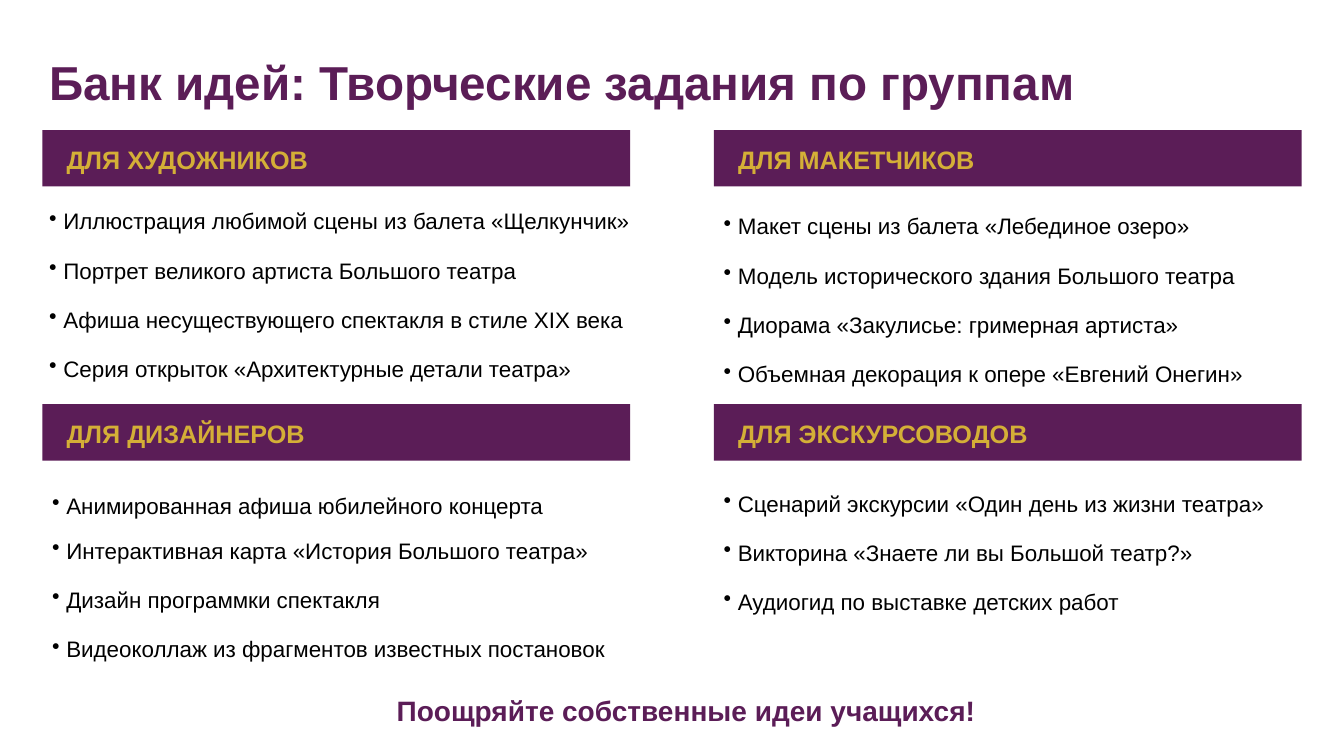
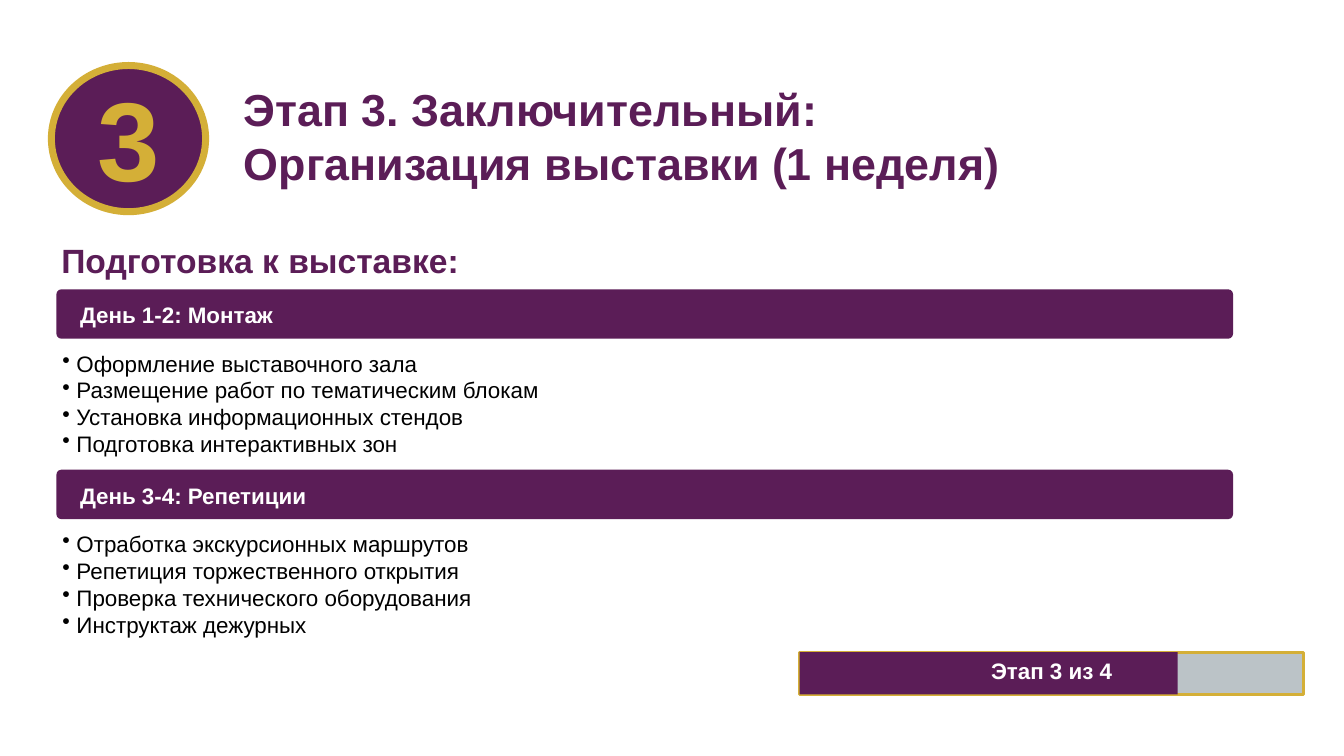
import dataclasses

import pptx
import pptx.dml.color
import pptx.enum.shapes
import pptx.enum.text
import pptx.oxml.xmlchemy
import pptx.util

SHAPE = pptx.enum.shapes.MSO_SHAPE
ANCHOR = pptx.enum.text.MSO_ANCHOR
ALIGN = pptx.enum.text.PP_ALIGN
EMU_PER_PX = 9144


@dataclasses.dataclass(frozen=True)
class Theme:
    """Colours, font and type sizes of the deck."""
    purple: str = "5B1D57"
    gold: str = "D4AF37"
    grey: str = "BBC3C7"
    white: str = "FFFFFF"
    black: str = "000000"
    font: str = "Arial"
    title: int = 34
    stage_title: int = 32
    subtitle: int = 24
    closing: int = 20
    heading: int = 18
    body: int = 16
    numeral: int = 80


@dataclasses.dataclass(frozen=True)
class Box:
    """A rectangle in px."""
    left: int
    top: int
    width: int
    height: int

    def inner(self, left, top, width, height):
        """Return a box placed relative to this one."""
        return Box(self.left + left, self.top + top, width, height)

    def emu(self):
        """Return the four lengths in EMU."""
        return [px(value) for value in dataclasses.astuple(self)]


THEME = Theme()
PAGE = Box(0, 0, 1333, 750)


def px(value):
    """Turn px into EMU."""
    return pptx.util.Emu(value * EMU_PER_PX)


def rgb(colour):
    """Turn a hex string into a colour."""
    return pptx.dml.color.RGBColor.from_string(colour)


def write(frame, lines, size, colour, bold=True, align=ALIGN.LEFT):
    """Write lines as paragraphs and return them."""
    paras = []
    for index, line in enumerate(lines):
        para = frame.add_paragraph() if index else frame.paragraphs[0]
        para.alignment = align
        span = para.add_run()
        span.text = line
        span.font.name = THEME.font
        span.font.size = pptx.util.Pt(size)
        span.font.bold = bold
        span.font.color.rgb = rgb(colour)
        paras.append(para)
    return paras


def add_label(shapes, box, lines, size, colour=THEME.purple, bold=True,
              align=ALIGN.LEFT, anchor=ANCHOR.TOP):
    """Add a wrapping text box and return its paragraphs."""
    frame = shapes.add_textbox(*box.emu()).text_frame
    frame.word_wrap = True
    frame.vertical_anchor = anchor
    return write(frame, lines, size, colour, bold, align)


def add_block(shapes, kind, box, fill, line=None, line_width=0):
    """Add a flat filled shape with an optional outline."""
    block = shapes.add_shape(kind, *box.emu())
    block.shadow.inherit = False
    block.fill.solid()
    block.fill.fore_color.rgb = rgb(fill)
    if line:
        block.line.color.rgb = rgb(line)
        block.line.width = pptx.util.Pt(line_width)
    else:
        block.line.fill.background()
    return block


def add_band(shapes, kind, box, text, size, colour, inset):
    """Add a purple band that carries a heading."""
    band = add_block(shapes, kind, box, THEME.purple)
    frame = band.text_frame
    frame.margin_left = px(inset)
    frame.margin_top = px(7)
    frame.vertical_anchor = ANCHOR.MIDDLE
    write(frame, [text], size, colour)
    return band


def add_list(shapes, box, items, gaps=None):
    """Add a bulleted list with the given gaps in points between its items."""
    paras = add_label(shapes, box, items, THEME.body, THEME.black, bold=False)
    for index, para in enumerate(paras):
        properties = para._p.get_or_add_pPr()
        properties.set("marL", str(px(14)))
        properties.set("indent", str(px(-14)))
        bullet = pptx.oxml.xmlchemy.OxmlElement("a:buChar")
        bullet.set("char", "•")
        properties.append(bullet)
        if index and gaps:
            para.space_before = pptx.util.Pt(gaps[index - 1])


def add_task_panel(shapes, box, heading, items, shift, first_gap=16):
    """Add one group of tasks: a band and the list under it."""
    add_band(shapes, SHAPE.RECTANGLE, box.inner(0, 0, box.width, 56),
             heading, THEME.heading, THEME.gold, 24)
    left, top = shift
    gaps = [first_gap] + [16] * (len(items) - 2)
    add_list(shapes, box.inner(left, top, 620, box.height - top), items, gaps)


def add_day(shapes, box, heading, items):
    """Add one step of the preparation: a rounded band and its list."""
    band = add_band(shapes, SHAPE.ROUNDED_RECTANGLE, box.inner(0, 0, box.width, 49),
                    heading, THEME.body, THEME.white, 22)
    band.adjustments[0] = 0.1
    add_list(shapes, box.inner(-4, 55, 1111, 118), items)


def add_stage_badge(shapes, box, number):
    """Add the round badge with the stage number."""
    badge = add_block(shapes, SHAPE.OVAL, box, THEME.purple, THEME.gold, 5)
    frame = badge.text_frame
    frame.word_wrap = False
    frame.margin_left = frame.margin_right = frame.margin_top = 0
    frame.margin_bottom = px(4)
    frame.vertical_anchor = ANCHOR.MIDDLE
    write(frame, [str(number)], THEME.numeral, THEME.gold, align=ALIGN.CENTER)


def add_progress(shapes, box, stage, total):
    """Add the grouped progress bar with its caption."""
    parts = shapes.add_group_shape().shapes
    add_block(parts, SHAPE.RECTANGLE, box, THEME.grey, THEME.gold, 2)
    done = box.inner(0, 0, box.width * stage // total, box.height)
    add_block(parts, SHAPE.RECTANGLE, done, THEME.purple)
    add_label(parts, box.inner(0, 0, box.width, 37), [f"Этап {stage} из {total}"],
              THEME.body, THEME.white, align=ALIGN.CENTER, anchor=ANCHOR.MIDDLE)


def build_ideas(shapes, page):
    """Build the slide with the four groups of tasks."""
    add_label(shapes, page.inner(39, 48, 1167, 67),
              ["Банк идей: Творческие задания по группам"], THEME.title)
    panels = [
        ("ДЛЯ ХУДОЖНИКОВ", (-3, 72), 16, [
            "Иллюстрация любимой сцены из балета «Щелкунчик»",
            "Портрет великого артиста Большого театра",
            "Афиша несуществующего спектакля в стиле XIX века",
            "Серия открыток «Архитектурные детали театра»"]),
        ("ДЛЯ МАКЕТЧИКОВ", (0, 77), 16, [
            "Макет сцены из балета «Лебединое озеро»",
            "Модель исторического здания Большого театра",
            "Диорама «Закулисье: гримерная артиста»",
            "Объемная декорация к опере «Евгений Онегин»"]),
        ("ДЛЯ ДИЗАЙНЕРОВ", (0, 82), 13, [
            "Анимированная афиша юбилейного концерта",
            "Интерактивная карта «История Большого театра»",
            "Дизайн программки спектакля",
            "Видеоколлаж из фрагментов известных постановок"]),
        ("ДЛЯ ЭКСКУРСОВОДОВ", (0, 80), 16, [
            "Сценарий экскурсии «Один день из жизни театра»",
            "Викторина «Знаете ли вы Большой театр?»",
            "Аудиогид по выставке детских работ"]),
    ]
    for index, (heading, shift, first_gap, items) in enumerate(panels):
        row, column = divmod(index, 2)
        box = page.inner(42 + 666 * column, 129 + 272 * row, 583, 262)
        add_task_panel(shapes, box, heading, items, shift, first_gap)
    add_label(shapes, page.inner(97, 683, 1167, 44),
              ["Поощряйте собственные идеи учащихся!"],
              THEME.closing, align=ALIGN.CENTER)


def build_stage(shapes, page):
    """Build the slide of the closing stage."""
    add_label(shapes, page.inner(232, 76, 917, 118),
              ["Этап 3. Заключительный:", "Организация выставки (1 неделя)"],
              THEME.stage_title)
    add_label(shapes, page.inner(51, 233, 694, 50),
              ["Подготовка к выставке:"], THEME.subtitle)
    days = [
        ("День 1-2: Монтаж", [
            "Оформление выставочного зала",
            "Размещение работ по тематическим блокам",
            "Установка информационных стендов",
            "Подготовка интерактивных зон"]),
        ("День 3-4: Репетиции", [
            "Отработка экскурсионных маршрутов",
            "Репетиция торжественного открытия",
            "Проверка технического оборудования",
            "Инструктаж дежурных"]),
    ]
    for index, (heading, items) in enumerate(days):
        add_day(shapes, page.inner(56, 287 + 179 * index, 1167, 173), heading, items)
    add_stage_badge(shapes, page.inner(51, 65, 153, 145), 3)
    add_progress(shapes, page.inner(793, 647, 500, 42), 3, 4)


def main():
    """Build the deck and save it."""
    deck = pptx.Presentation()
    deck.slide_width, deck.slide_height = px(PAGE.width), px(PAGE.height)
    for build in (build_ideas, build_stage):
        slide = deck.slides.add_slide(deck.slide_layouts[6])
        slide.background.fill.solid()
        slide.background.fill.fore_color.rgb = rgb(THEME.white)
        build(slide.shapes, PAGE)
    deck.save("out.pptx")


if __name__ == "__main__":
    main()
